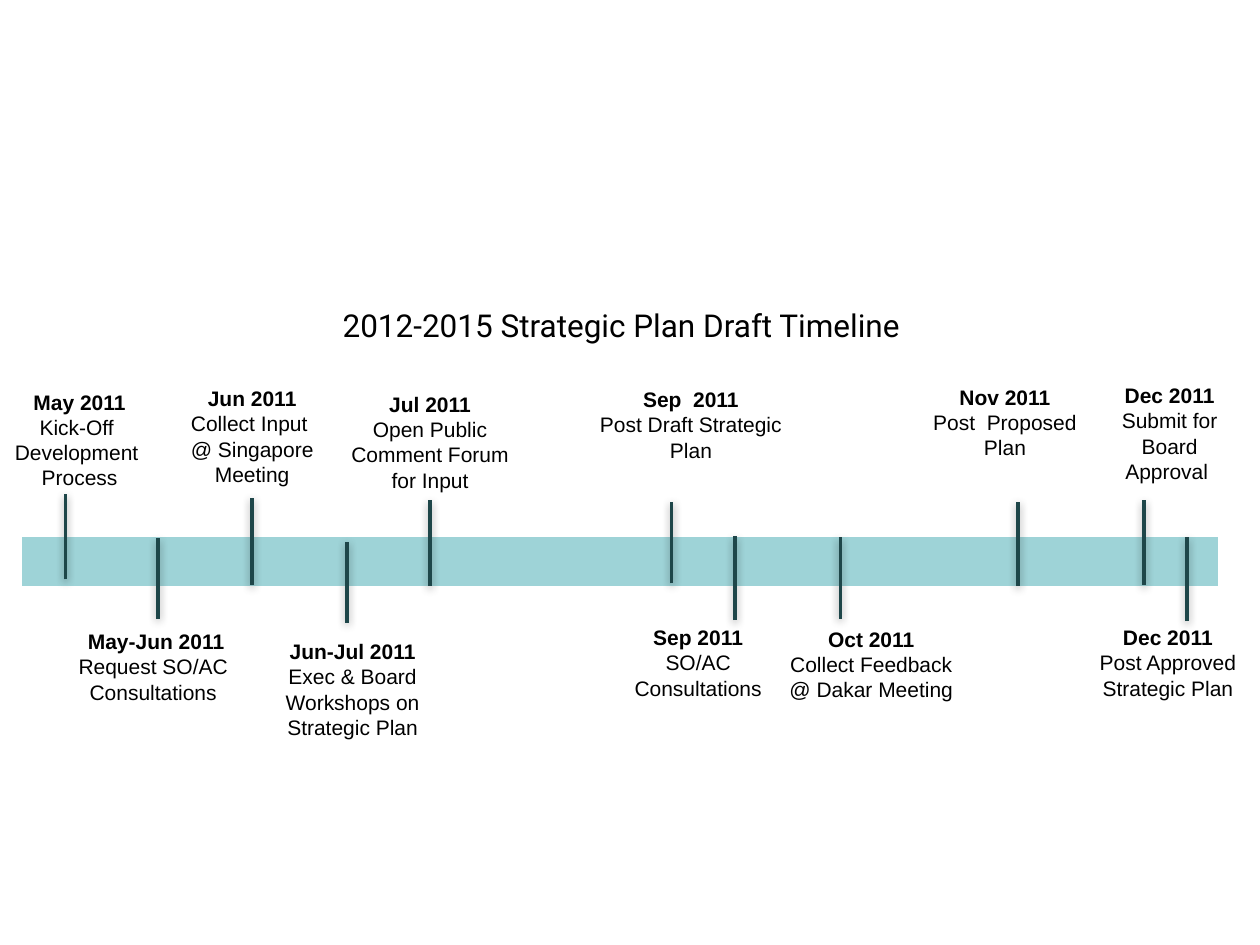
from collections import namedtuple

from pptx import Presentation
from pptx.dml.color import RGBColor
from pptx.enum.shapes import MSO_CONNECTOR as Connector
from pptx.enum.text import MSO_ANCHOR as Anchor, MSO_AUTO_SIZE as AutoSize, PP_ALIGN as Align
from pptx.oxml import parse_xml
from pptx.oxml.ns import nsdecls
from pptx.util import Cm, Pt

BLACK = RGBColor(0x00, 0x00, 0x00)
BAND = RGBColor(0x9E, 0xD3, 0xD7)
TICK = RGBColor(0x1E, 0x46, 0x49)

LINE_HEIGHT = 0.51
INSETS = 0.27

# Lengths in cm; rows is the number of text lines including the date
Milestone = namedtuple("Milestone", "left top width rows date texts tick_x tick_top tick_bottom")
MILESTONES = [
    Milestone(-0.2, 7.72, 3.61, 4, "May 2011", ["Kick-Off ", "Development ", "Process"],
              1.32, 9.96, 11.68),
    Milestone(1.07, 12.55, 4.04, 3, " May-Jun 2011", ["Request SO/AC Consultations"],
              3.18, 10.85, 12.47),
    Milestone(3.18, 7.65, 3.81, 4, "Jun 2011", ["Collect Input \n@ Singapore Meeting"],
              5.08, 10.03, 11.79),
    Milestone(5.33, 12.75, 3.56, 4, "Jun-Jul 2011", ["Exec & Board Workshops on Strategic Plan"],
              6.99, 10.92, 12.55),
    Milestone(6.55, 7.77, 4.24, 4, "Jul 2011", ["Open Public Comment Forum for Input"],
              8.67, 10.08, 11.81),
    Milestone(11.81, 7.67, 4.24, 3, "Sep  2011", ["Post Draft Strategic Plan"],
              13.54, 10.11, 11.76),
    Milestone(12.07, 12.47, 4.01, 3, "Sep 2011", ["SO/AC Consultations"],
              14.82, 10.8, 12.5),
    Milestone(15.57, 12.5, 3.99, 3, "Oct 2011", ["Collect Feedback @ Dakar Meeting"],
              16.94, 10.82, 12.47),
    Milestone(18.14, 7.62, 4.24, 3, "Nov 2011", ["Post  Proposed Plan"],
              20.52, 10.11, 11.81),
    Milestone(22.17, 7.59, 2.82, 4, "Dec 2011", ["Submit for Board Approval "],
              23.06, 10.08, 11.79),
    Milestone(21.69, 12.47, 3.71, 3, "Dec 2011", ["Post Approved Strategic Plan"],
              23.93, 10.82, 12.52),
]


def add_box(page, left, top, width, height):
    box = page.shapes.add_textbox(Cm(left), Cm(top), Cm(width), Cm(height))
    box.text_frame.word_wrap = True
    return box


def add_span(para, text, size, font, bold=False):
    span = para.add_run()
    span.text = text
    span.font.size = Pt(size)
    span.font.name = font
    span.font.bold = bold
    span.font.color.rgb = BLACK


def add_title(page, text):
    frame = add_box(page, 0.64, 5.28, 23.77, 2.54).text_frame
    frame.vertical_anchor = Anchor.MIDDLE
    para = frame.paragraphs[0]
    para.alignment = Align.CENTER
    add_span(para, text, 18, "Roboto")


def add_band(page):
    table = page.shapes.add_table(1, 1, Cm(0.43), Cm(10.82), Cm(24.13), Cm(1.04)).table
    table.first_row = table.horz_banding = False
    cell = table.cell(0, 0)
    cell.text_frame.paragraphs[0].font.size = Pt(12)
    # White borders, heavier at the bottom
    properties = cell._tc.get_or_add_tcPr()
    for side, points in (("L", 1), ("R", 1), ("T", 1), ("B", 3)):
        properties.append(parse_xml(
            f'<a:ln{side} {nsdecls("a")} w="{Pt(points)}">'
            f'<a:solidFill><a:srgbClr val="FFFFFF"/></a:solidFill></a:ln{side}>'))
    cell.fill.solid()
    cell.fill.fore_color.rgb = BAND


def add_tick(page, x, top, bottom):
    tick = page.shapes.add_connector(Connector.STRAIGHT, Cm(x), Cm(bottom), Cm(x), Cm(top))
    tick.line.color.rgb = TICK
    tick.line.width = Pt(2)
    # Soft shadow falling downwards
    tick._element.spPr.append(parse_xml(
        f'<a:effectLst {nsdecls("a")}>'
        f'<a:outerShdw blurRad="{Pt(5)}" dist="{Pt(1.6)}" dir="5400000" rotWithShape="0">'
        '<a:srgbClr val="000000"><a:alpha val="38000"/></a:srgbClr>'
        '</a:outerShdw></a:effectLst>'))


def add_label(page, item):
    height = INSETS + LINE_HEIGHT * item.rows
    frame = add_box(page, item.left, item.top, item.width, height).text_frame
    frame.auto_size = AutoSize.SHAPE_TO_FIT_TEXT
    para = frame.paragraphs[0]
    para.alignment = Align.CENTER
    add_span(para, item.date, 12, "Arial", bold=True)
    for text in item.texts:
        para = frame.add_paragraph()
        para.alignment = Align.CENTER
        for index, line in enumerate(text.split("\n")):
            if index:
                para.add_line_break()
            add_span(para, line, 12, "Arial")


def main():
    deck = Presentation()
    deck.slide_width, deck.slide_height = Cm(25.4), Cm(19.05)
    page = deck.slides.add_slide(deck.slide_layouts[6])

    add_title(page, "2012-2015 Strategic Plan Draft Timeline")
    add_band(page)
    for item in MILESTONES:
        add_label(page, item)
        add_tick(page, item.tick_x, item.tick_top, item.tick_bottom)

    deck.save("out.pptx")


if __name__ == "__main__":
    main()
